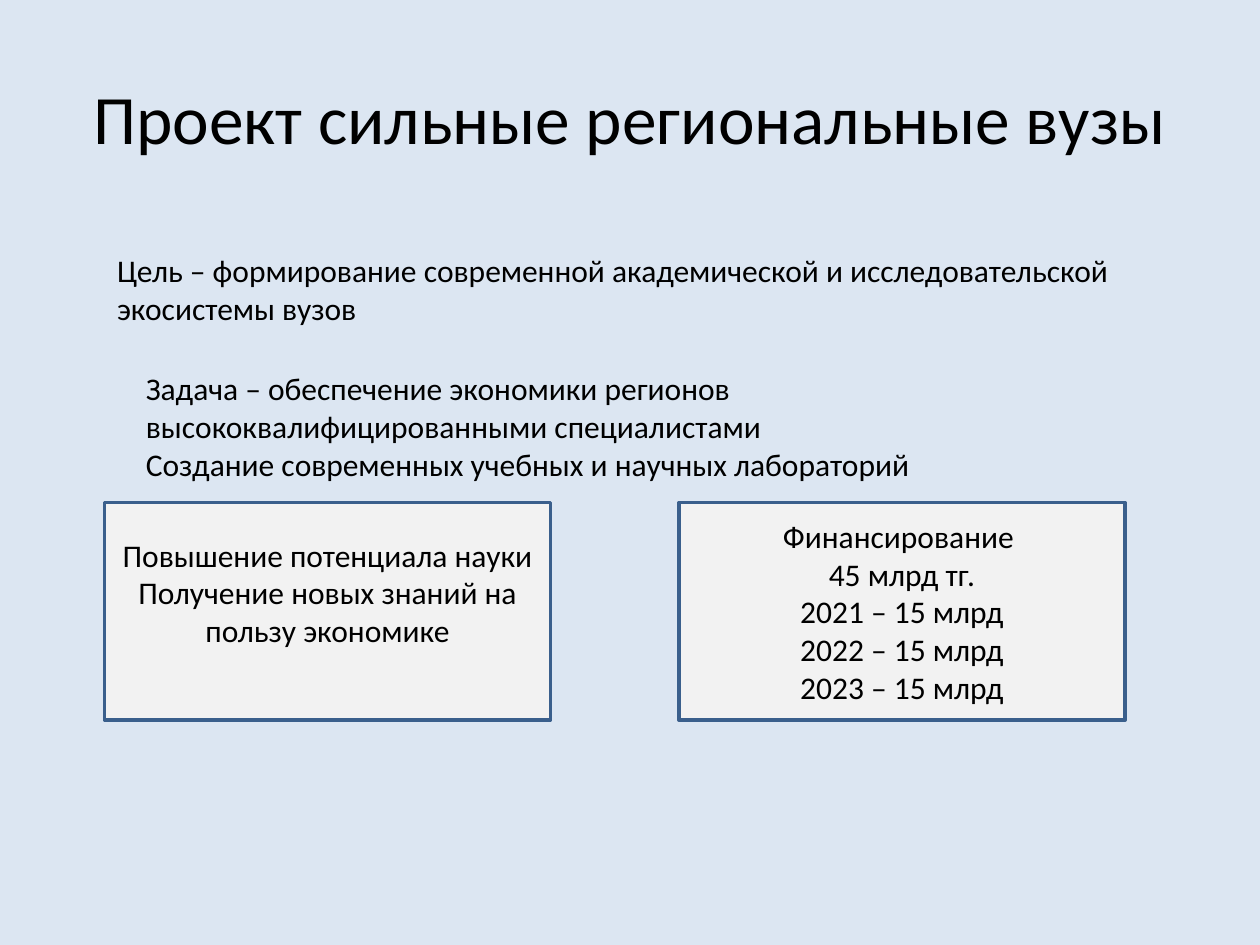
import pptx
import pptx.dml.color
import pptx.enum.shapes
import pptx.enum.text
import pptx.util

Cm = pptx.util.Cm
Pt = pptx.util.Pt
ALIGN = pptx.enum.text.PP_ALIGN
ANCHOR = pptx.enum.text.MSO_ANCHOR

COLORS = {"background": "DCE6F2", "card": "F2F2F2", "border": "3A5F8C", "text": "000000"}


def color(name):
    return pptx.dml.color.RGBColor.from_string(COLORS[name])


def write_text(shape, lines, size=18, align=ALIGN.LEFT, anchor=ANCHOR.TOP):
    frame = shape.text_frame
    frame.word_wrap = True
    frame.vertical_anchor = anchor
    for index, line in enumerate(lines):
        paragraph = frame.paragraphs[0] if index == 0 else frame.add_paragraph()
        paragraph.alignment = align
        run = paragraph.add_run()
        run.text = line
        run.font.name = "Calibri"
        run.font.size = Pt(size)
        run.font.color.rgb = color("text")


def add_text(slide, box, lines, **text_format):
    shape = slide.shapes.add_textbox(*map(Cm, box))
    write_text(shape, lines, **text_format)


def add_card(slide, box, lines, bottom_inset=0.13):
    shape = slide.shapes.add_shape(pptx.enum.shapes.MSO_SHAPE.RECTANGLE, *map(Cm, box))
    shape.shadow.inherit = False
    shape.fill.solid()
    shape.fill.fore_color.rgb = color("card")
    shape.line.color.rgb = color("border")
    shape.line.width = Pt(2)
    shape.text_frame.margin_bottom = Cm(bottom_inset)
    write_text(shape, lines, align=ALIGN.CENTER, anchor=ANCHOR.MIDDLE)


def add_cards(slide, box):
    """Two equal cards at the left and right ends of the box."""
    left, top, width, height = box
    card_width = 8.99
    results = ["Повышение потенциала науки", "Получение новых знаний на пользу экономике"]
    years = [f"{year} – 15 млрд" for year in (2021, 2022, 2023)]
    # The taller bottom inset lifts the text by half a line
    add_card(slide, (left, top, card_width, height), results, bottom_inset=0.89)
    add_card(slide, (left + width - card_width, top, card_width, height),
             ["Финансирование ", "45 млрд тг.", *years])


def main():
    presentation = pptx.Presentation()
    presentation.slide_width = Cm(25.4)
    presentation.slide_height = Cm(19.05)
    slide = presentation.slides.add_slide(presentation.slide_layouts[6])
    slide.background.fill.solid()
    slide.background.fill.fore_color.rgb = color("background")

    # Title
    add_text(slide, (1.27, 0.76, 22.86, 3.18), ["Проект сильные региональные вузы"],
             size=39.6, align=ALIGN.CENTER, anchor=ANCHOR.MIDDLE)

    # Results and funding
    add_cards(slide, (2.11, 10.13, 20.57, 4.39))

    # Goal and tasks
    add_text(slide, (2.11, 4.93, 21.21, 1.8),
             ["Цель – формирование современной академической и исследовательской экосистемы вузов"])
    add_text(slide, (2.69, 7.32, 19.99, 2.57),
             ["Задача – обеспечение экономики регионов высококвалифицированными специалистами",
              "Создание современных учебных и научных лабораторий"])

    presentation.save("out.pptx")


if __name__ == "__main__":
    main()
